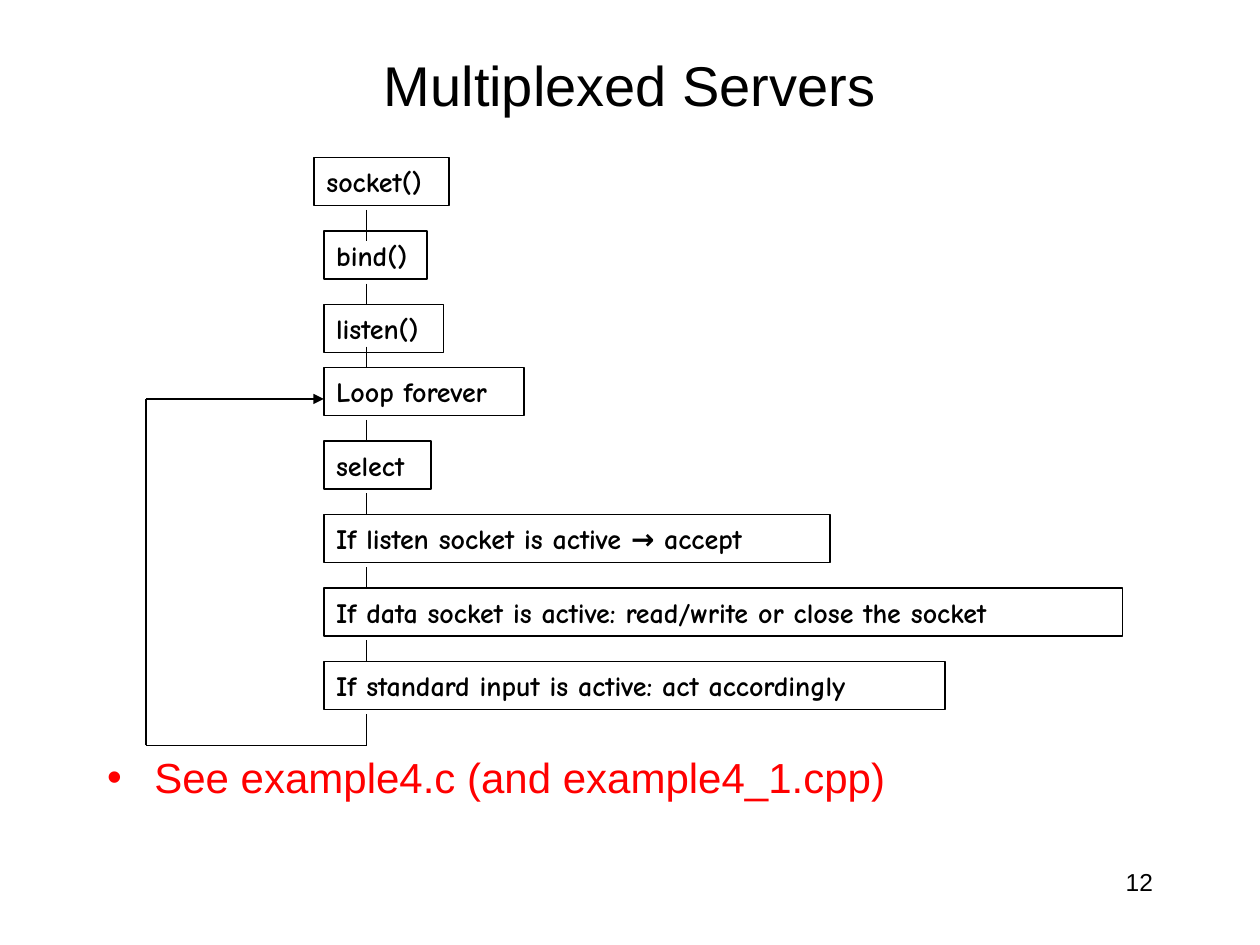
from dataclasses import dataclass
from itertools import pairwise

from pptx import Presentation
from pptx.dml.color import RGBColor
from pptx.enum.shapes import MSO_CONNECTOR, MSO_SHAPE
from pptx.enum.text import MSO_ANCHOR, MSO_AUTO_SIZE, PP_ALIGN
from pptx.oxml.ns import qn
from pptx.util import Pt
from lxml.etree import SubElement


@dataclass(frozen=True)
class Theme:
    ink: RGBColor = RGBColor(0, 0, 0)
    accent: RGBColor = RGBColor(255, 0, 0)
    sans: str = "Arial"
    comic: str = "Comic Neue"
    title_size: float = 32
    body_size: float = 24
    step_size: float = 16
    number_size: float = 14
    box_line: float = 1
    arrow_line: float = 0.75


class SlideBuilder:
    def __init__(self, slide, theme):
        self.slide = slide
        self.theme = theme

    def place(self, shape, left, top, width, height):
        shape.left, shape.top = Pt(left), Pt(top)
        shape.width, shape.height = Pt(width), Pt(height)

    def set_text(self, shape, text, size, font, color, align, anchor, bold=False):
        frame = shape.text_frame
        frame.text = text
        frame.word_wrap = True
        frame.auto_size = MSO_AUTO_SIZE.NONE
        frame.vertical_anchor = anchor
        paragraph = frame.paragraphs[0]
        paragraph.alignment = align
        paragraph.font.name = font
        paragraph.font.size = Pt(size)
        paragraph.font.bold = bold
        paragraph.font.color.rgb = color
        return paragraph

    def title(self, text, *bounds):
        heading = self.slide.shapes.title
        self.place(heading, *bounds)
        self.set_text(heading, text, self.theme.title_size, self.theme.sans,
                      self.theme.ink, PP_ALIGN.CENTER, MSO_ANCHOR.MIDDLE)

    def bullet(self, text, *bounds):
        body = self.slide.placeholders[1]
        self.place(body, *bounds)
        paragraph = self.set_text(body, text, self.theme.body_size, self.theme.sans,
                                  self.theme.accent, PP_ALIGN.LEFT, MSO_ANCHOR.BOTTOM)
        paragraph.space_before = Pt(0)
        properties = paragraph._p.get_or_add_pPr()
        properties.set("marL", str(Pt(27)))
        properties.set("indent", str(Pt(-27)))

    def step(self, text, *bounds):
        box = self.slide.shapes.add_shape(MSO_SHAPE.RECTANGLE, *map(Pt, bounds))
        box.shadow.inherit = False
        box.fill.background()
        box.line.color.rgb = self.theme.ink
        box.line.width = Pt(self.theme.box_line)
        self.set_text(box, text, self.theme.step_size, self.theme.comic,
                      self.theme.ink, PP_ALIGN.LEFT, MSO_ANCHOR.MIDDLE, bold=True)

    def line(self, start, end, arrow=False):
        link = self.slide.shapes.add_connector(
            MSO_CONNECTOR.STRAIGHT, *map(Pt, (*start, *end)))
        link.line.color.rgb = self.theme.ink
        link.line.width = Pt(self.theme.arrow_line)
        if arrow:
            SubElement(link.line._get_or_add_ln(), qn("a:tailEnd"), type="triangle")
        SubElement(link._element.spPr, qn("a:effectLst"))

    def page_number(self, text, *bounds):
        number = self.slide.shapes.add_textbox(*map(Pt, bounds))
        self.set_text(number, text, self.theme.number_size, self.theme.sans,
                      self.theme.ink, PP_ALIGN.RIGHT, MSO_ANCHOR.TOP)


STEP_LEFT, STEP_HEIGHT = 185, 27.4
STEP_PITCH, LOOP_PITCH = 42, 36
FLOW_X, RETURN_X = 209.5, 83.5
LINK_LENGTH = 12
STEPS = [
    ("socket()", 77),
    ("bind()", 59),
    ("listen()", 68.5),
    ("Loop forever", 114.5),
    ("select", 61.5),
    ("If listen socket is active → accept", 289.5),
    ("If data socket is active: read/write or close the socket", 456.5),
    ("If standard input is active: act accordingly", 355),
]


def draw_flow(builder):
    """Stack the steps, link each to the next and lead the last back to the loop."""
    top = 90
    for index, (text, width) in enumerate(STEPS):
        left = STEP_LEFT - 5.5 if index == 0 else STEP_LEFT
        builder.step(text, left, top, width, STEP_HEIGHT)
        if text == "Loop forever":
            loop_y = top + 18
        top += LOOP_PITCH if text == "listen()" else STEP_PITCH
        if index < len(STEPS) - 1:
            overlap = 6 if index == 0 else 0
            builder.line((FLOW_X, top - LINK_LENGTH), (FLOW_X, top + overlap))

    bottom = top + 6
    corners = [(FLOW_X, top - LINK_LENGTH), (FLOW_X, bottom), (RETURN_X, bottom),
               (RETURN_X, loop_y), (STEP_LEFT, loop_y)]
    for start, end in pairwise(corners):
        builder.line(start, end, arrow=end == corners[-1])


def main():
    presentation = Presentation()
    presentation.slide_width, presentation.slide_height = Pt(720), Pt(540)
    slide = presentation.slides.add_slide(presentation.slide_layouts[1])
    builder = SlideBuilder(slide, Theme())
    builder.title("Multiplexed Servers", 54, 18, 612, 60)
    builder.bullet("See example4.c (and example4_1.cpp)", 54, 90, 612, 372)
    draw_flow(builder)
    builder.page_number("12", 516, 492, 150, 36)
    presentation.save("out.pptx")


if __name__ == "__main__":
    main()
